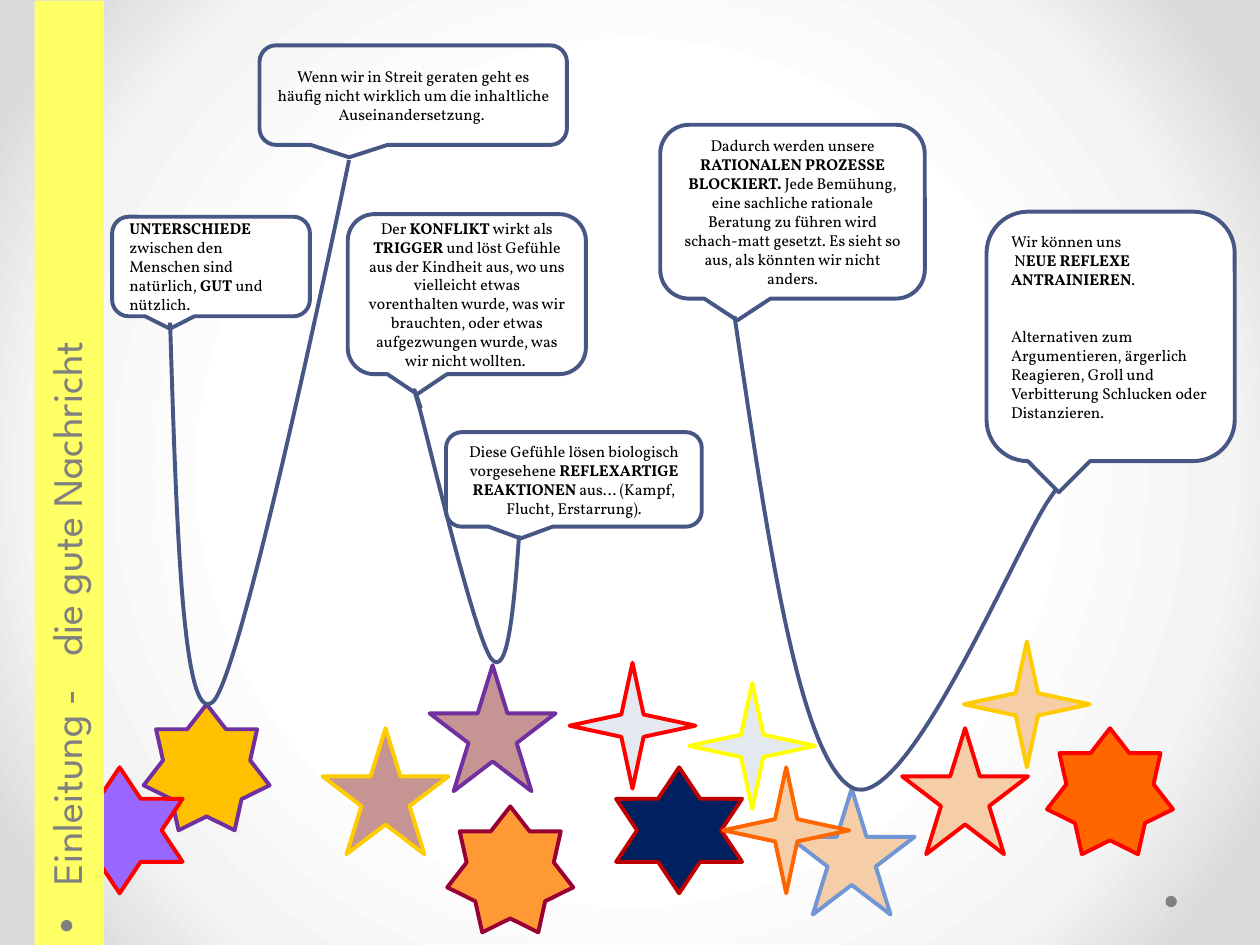
"""Build the slide on conflict, reflexes and the good news."""
from lxml.etree import SubElement
from pptx import Presentation
from pptx.dml.color import RGBColor as RGB
from pptx.enum.shapes import MSO_SHAPE as SHAPE
from pptx.enum.text import MSO_ANCHOR as ANCHOR, MSO_AUTO_SIZE as FIT, PP_ALIGN as ALIGN
from pptx.oxml import parse_xml
from pptx.oxml.ns import nsdecls, qn
from pptx.util import Inches, Pt

COLORS = {
    "white": "FFFFFF", "mist": "F4F4F4", "silver": "DADADA", "gray": "808080",
    "black": "000000", "slate": "475785", "lemon": "FFFF66", "yellow": "FFFF00",
    "gold": "FFCC00", "amber": "FFC000", "orange": "FF6600", "tangerine": "FF9933",
    "peach": "F5CEA7", "rose": "C79494", "ice": "E4E9EF", "red": "FF0000",
    "crimson": "C00000", "wine": "990033", "purple": "7030A0", "lilac": "9966FF",
    "navy": "002060", "sky": "7097D3",
}
BODY = {"name": "Vollkorn", "size": Pt(9)}
TITLE = {"name": "League Spartan", "size": Pt(24), "bold": False}
BACKGROUND = [(50, "white"), (76, "mist"), (92, "silver")]

STARS = [
    (SHAPE.STAR_7_POINT, 8.31, 5.78, "orange", "red"),
    (SHAPE.STAR_7_POINT, 3.55, 6.4, "tangerine", "wine"),
    (SHAPE.STAR_7_POINT, 1.14, 5.59, "amber", "purple"),
    (SHAPE.STAR_6_POINT, 0.45, 6.09, "lilac", "red"),
    (SHAPE.STAR_6_POINT, 4.89, 6.09, "navy", "crimson"),
    (SHAPE.STAR_5_POINT, 6.26, 6.26, "peach", "sky"),
    (SHAPE.STAR_5_POINT, 3.41, 5.28, "rose", "purple"),
    (SHAPE.STAR_5_POINT, 7.16, 5.78, "peach", "red"),
    (SHAPE.STAR_4_POINT, 5.47, 5.42, "ice", "yellow"),
    (SHAPE.STAR_5_POINT, 2.56, 5.78, "rose", "gold"),
    (SHAPE.STAR_4_POINT, 5.74, 6.09, "peach", "orange"),
    (SHAPE.STAR_4_POINT, 4.52, 5.26, "ice", "red"),
    (SHAPE.STAR_4_POINT, 7.65, 5.09, "peach", "gold"),
]
DIFFERENCES = "*UNTERSCHIEDE *zwischen den Menschen sind natürlich, *GUT* und nützlich."
QUARREL = ("Wenn wir in Streit geraten geht es häufig nicht wirklich um die "
           "inhaltliche Auseinandersetzung. ")
TRIGGER = ("Der *KONFLIKT* wirkt als *TRIGGER* und löst Gefühle aus der Kindheit aus, "
           "wo uns vielleicht etwas vorenthalten wurde, was wir brauchten, oder etwas "
           "aufgezwungen wurde, was wir nicht wollten. ")
REACTIONS = ("Diese Gefühle lösen biologisch vorgesehene *REFLEXARTIGE REAKTIONEN *"
             "aus… (Kampf, Flucht, Erstarrung).")
BLOCKED = ("Dadurch werden unsere *RATIONALEN PROZESSE BLOCKIERT. *Jede Bemühung, eine "
           "sachliche rationale Beratung zu führen wird schach-matt gesetzt. Es sieht "
           "so aus, als könnten wir nicht anders.")
TRAINING = [
    "Wir können uns",
    " N*EUE REFLEXE ANTRAINIEREN*.",
    "Alternativen zum Argumentieren, ärgerlich Reagieren, Groll und Verbitterung "
    "Schlucken oder Distanzieren.",
]
QUARREL_STRING = [(1.35, 2.56), (1.4, 4.17), (1.45, 5.78), (1.69, 5.57),
                  (1.93, 5.35), (2.77, 1.27), (2.77, 1.27)]
TRIGGER_STRING = [(4.12, 4.25), (4.08, 4.82), (4.03, 5.39), (3.9, 5.23), (3.77, 5.06),
                  (3.42, 3.58), (3.33, 3.24), (3.23, 2.91), (3.34, 3.24), (3.34, 3.24)]
TRAINING_STRING = [(5.83, 2.51), (6.09, 4.26), (6.34, 6.01), (6.76, 6.25), (7.18, 6.49),
                   (8.06, 4.35), (8.33, 3.96), (8.6, 3.57), (8.47, 3.75), (8.35, 3.93)]


def color(name):
    return RGB.from_string(COLORS[name])


class Deck:
    """Hold the style and the current slide."""

    def __init__(self):
        self.prs = Presentation()
        self.prs.slide_width, self.prs.slide_height = Inches(10), Inches(7.5)
        self.line_width = Pt(2.25)
        self.slide = self.prs.slides.add_slide(self.prs.slide_layouts[5])

    def background(self, stops):
        fill = self.slide.background.fill
        fill.solid()
        fill.fore_color.rgb = color("white")
        solid = next(self.slide.element.iter(qn("a:solidFill")))
        gs = "".join(f'<a:gs pos="{pos * 1000}"><a:srgbClr val="{COLORS[name]}"/></a:gs>'
                     for pos, name in stops)
        solid.getparent().replace(solid, parse_xml(
            f'<a:gradFill {nsdecls("a")} rotWithShape="1"><a:gsLst>{gs}</a:gsLst>'
            '<a:path path="circle"><a:fillToRect l="50000" t="50000" r="50000" b="50000"/>'
            '</a:path></a:gradFill>'))

    def paint(self, sp, fill=None, line=None):
        sp.shadow.inherit = False
        if fill:
            sp.fill.solid()
            sp.fill.fore_color.rgb = color(fill)
        else:
            sp.fill.background()
        if line:
            sp.line.color.rgb = color(line)
            sp.line.width = self.line_width
        else:
            sp.line.fill.background()

    def shape(self, kind, x, y, w, h, fill=None, line=None):
        sp = self.slide.shapes.add_shape(kind, Inches(x), Inches(y), Inches(w), Inches(h))
        self.paint(sp, fill, line)
        return sp

    def run(self, p, text, style, tint):
        r = p.add_run()
        r.text = text
        for key, value in style.items():
            setattr(r.font, key, value)
        r.font.color.rgb = color(tint)
        return r

    def callout(self, x, y, w, h, texts, align=ALIGN.CENTER, fill="white"):
        sp = self.shape(SHAPE.ROUNDED_RECTANGULAR_CALLOUT, x, y, w, h, fill, "slate")
        tf = sp.text_frame
        tf.word_wrap, tf.vertical_anchor = True, ANCHOR.MIDDLE
        for i, text in enumerate(texts):
            p = tf.add_paragraph() if i else tf.paragraphs[0]
            p.alignment = align
            for j, part in enumerate(text.split("*")):
                if part:
                    self.run(p, part, {**BODY, "bold": j % 2 == 1}, "black")
        return tf

    def string(self, x, y, w, h, points):
        start, *rest = [(Inches(px), Inches(py)) for px, py in points]
        builder = self.slide.shapes.build_freeform(*start)
        builder.add_line_segments(rest, close=False)
        sp = builder.convert_to_shape()
        dx, dy = sp.left - Inches(x), sp.top - Inches(y)
        sp.left, sp.top, sp.width, sp.height = map(Inches, (x, y, w, h))
        outline = next(sp._element.iter(qn("a:path")))
        outline.set("w", str(sp.width))
        outline.set("h", str(sp.height))
        for pt in outline.iter(qn("a:pt")):
            pt.set("x", str(int(pt.get("x")) + dx))
            pt.set("y", str(int(pt.get("y")) + dy))
        lines = outline.findall(qn("a:lnTo"))
        for i in range(0, len(lines), 3):
            curve = SubElement(outline, qn("a:cubicBezTo"))
            for line in lines[i:i + 3]:
                curve.append(line[0])
                outline.remove(line)
        self.paint(sp, line="slate")

    def side_title(self, first, second):
        sp = self.slide.shapes.title
        sp.left, sp.top, sp.width, sp.height = map(Inches, (-3.2, 3.48, 7.5, 0.55))
        sp.rotation = 270
        self.paint(sp, "lemon")
        tf = sp.text_frame
        tf.vertical_anchor, tf.auto_size = ANCHOR.TOP, FIT.NONE
        p = tf.paragraphs[0]
        p.alignment, p.space_before = ALIGN.LEFT, Pt(4.8)
        self.run(p, first, TITLE, "gray")
        gap = self.run(p, " ", TITLE, "gray")
        gap.font._element.set("spc", "1250")
        self.run(p, second, TITLE, "gray")
        pPr = p._p.get_or_add_pPr()
        pPr.set("marL", str(Inches(0.38)))
        pPr.set("indent", str(Inches(-0.38)))
        SubElement(pPr, qn("a:buFont")).set("typeface", "Arial")
        SubElement(pPr, qn("a:buChar")).set("char", "•")
        self.slide.shapes._spTree.append(sp._element)


def main():
    deck = Deck()
    deck.background(BACKGROUND)
    deck.shape(SHAPE.OVAL, 9.25, 7.11, 0.09, 0.09, "gray")
    deck.callout(0.89, 1.72, 1.57, 0.79, [DIFFERENCES], ALIGN.LEFT)
    deck.callout(2.06, 0.36, 2.44, 0.79, [QUARREL], fill=None)
    for kind, x, y, fill, line in STARS:
        deck.shape(kind, x, y, 1, 1, fill, line)
    deck.string(1.35, 1.27, 1.42, 4.32, QUARREL_STRING)
    deck.callout(2.76, 1.7, 1.89, 1.27, [TRIGGER])
    deck.callout(3.54, 3.43, 2.03, 0.75, [REACTIONS])
    deck.string(3.29, 3.1, 0.84, 2.16, TRIGGER_STRING)
    deck.callout(5.24, 0.99, 2.1, 1.38, [BLOCKED])
    deck.string(5.83, 2.51, 2.66, 3.76, TRAINING_STRING)
    tf = deck.callout(7.83, 1.68, 1.97, 1.98, TRAINING, ALIGN.LEFT)
    tf.paragraphs[-1].space_before = Pt(22)
    tf.margin_bottom = Inches(0.2)
    deck.side_title("Einleitung -", "die gute Nachricht")
    deck.prs.save("out.pptx")


if __name__ == "__main__":
    main()
